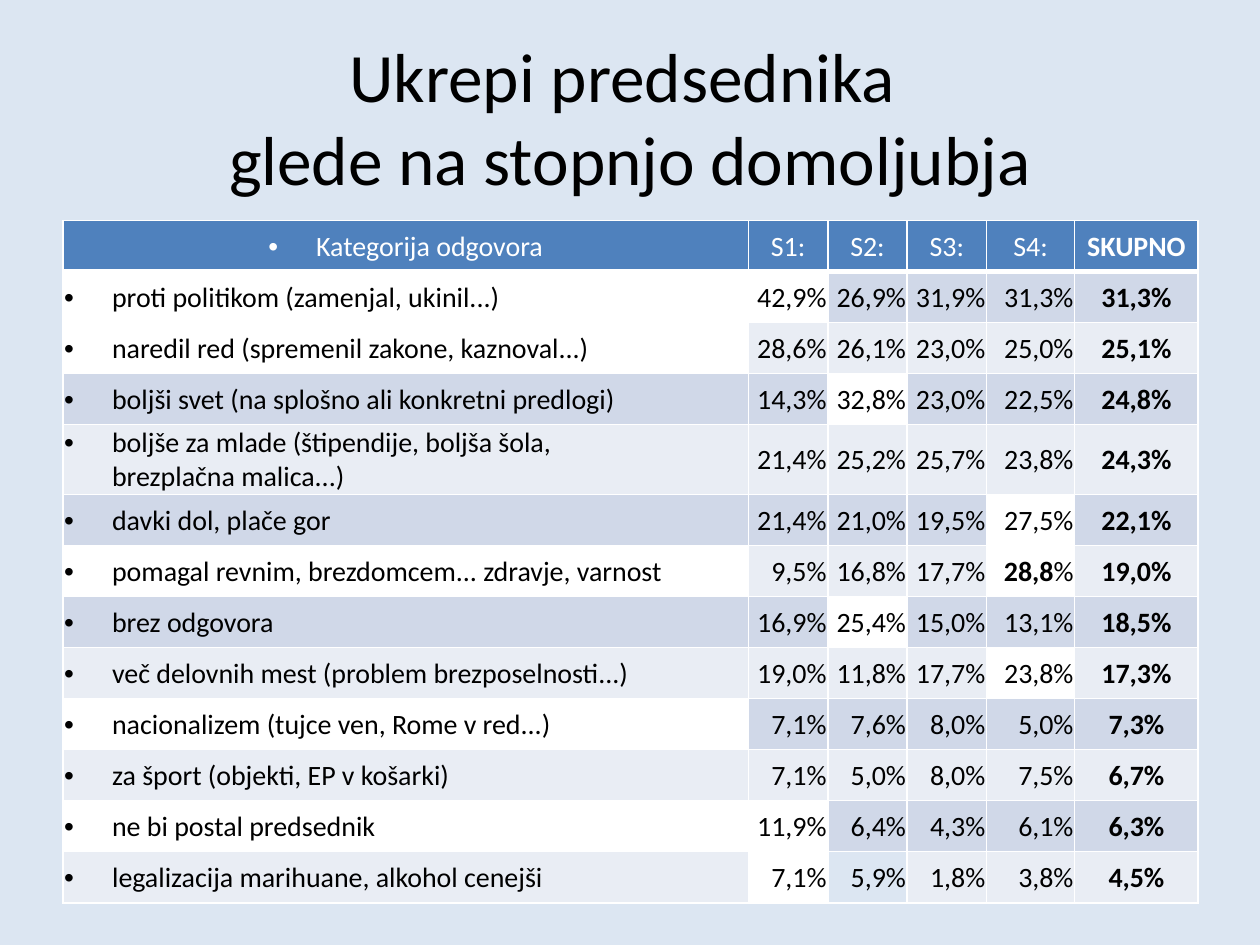
from lxml import etree
from pptx import Presentation
from pptx.dml.color import RGBColor
from pptx.enum.text import MSO_ANCHOR, PP_ALIGN
from pptx.oxml.ns import qn
from pptx.util import Inches, Pt

CENTER, LEFT, RIGHT, JUSTIFY = PP_ALIGN.CENTER, PP_ALIGN.LEFT, PP_ALIGN.RIGHT, PP_ALIGN.JUSTIFY
MIDDLE = MSO_ANCHOR.MIDDLE

TITLE = "Ukrepi predsednika \nglede na stopnjo domoljubja"
HEADER = ["Kategorija odgovora", "S1:", "S2:", "S3:", "S4:", "SKUPNO"]
# answer category, shares by group and in total, columns highlighted in white
ANSWERS = [
    ("proti politikom (zamenjal, ukinil...)", "42,9 26,9 31,9 31,3 31,3", {0, 1}),
    ("naredil red (spremenil zakone, kaznoval...)", "28,6 26,1 23,0 25,0 25,1", {0}),
    ("boljši svet (na splošno ali konkretni predlogi)", "14,3 32,8 23,0 22,5 24,8", {2}),
    ("boljše za mlade (štipendije, boljša šola, \nbrezplačna malica...)",
     "21,4 25,2 25,7 23,8 24,3", set()),
    ("davki dol, plače gor", "21,4 21,0 19,5 27,5 22,1", {4}),
    ("pomagal revnim, brezdomcem... zdravje, varnost", "9,5 16,8 17,7 28,8 19,0", {0, 4}),
    ("brez odgovora", "16,9 25,4 15,0 13,1 18,5", {2}),
    ("več delovnih mest (problem brezposelnosti...)", "19,0 11,8 17,7 23,8 17,3", {4}),
    ("nacionalizem (tujce ven, Rome v red...)", "7,1 7,6 8,0 5,0 7,3", {0}),
    ("za šport (objekti, EP v košarki)", "7,1 5,0 8,0 7,5 6,7", set()),
    ("ne bi postal predsednik", "11,9 6,4 4,3 6,1 6,3", {0, 1}),
    ("legalizacija marihuane, alkohol cenejši", "7,1 5,9 1,8 3,8 4,5", {1}),
]
BOLD_NUMBER = (6, 4)
UNFILLED = (12, 2)
COLUMN_WIDTHS = [5.44, 0.63, 0.63, 0.63, 0.7, 0.98]
TOTAL = len(COLUMN_WIDTHS) - 1
BACKGROUND, HEAD_FILL, WHITE, BLACK = "DCE6F2", "4F81BD", "FFFFFF", "000000"
BANDS = ["E9EDF4", "D0D8E8"]
MARGINS = {"margin_left": 0.01, "margin_right": 0.01, "margin_top": 0.01, "margin_bottom": 0}


def color(hex_text):
    return RGBColor.from_string(hex_text)


def format_span(span, size, hex_text, bold=False):
    for name, value in {"name": "Calibri", "size": Pt(size), "bold": bold}.items():
        setattr(span.font, name, value)
    span.font.color.rgb = color(hex_text)


def add_bullet(para):
    props = para._p.get_or_add_pPr()
    props.set("marL", str(Inches(0.38)))
    props.set("indent", str(-Inches(0.38)))
    etree.SubElement(props, qn("a:buFont"), typeface="Arial")
    etree.SubElement(props, qn("a:buChar"), char="•")


def add_borders(cell, widths):
    """Draw white borders; widths maps the sides L, R, T, B to points."""
    props = cell._tc.get_or_add_tcPr()
    for side, width in widths.items():
        line = etree.SubElement(props, qn(f"a:ln{side}"), w=str(Pt(width)))
        fill = etree.SubElement(line, qn("a:solidFill"))
        etree.SubElement(fill, qn("a:srgbClr"), val=WHITE)


def fill_cell(cell, row, column, highlighted):
    if (row, column) == UNFILLED:
        cell.fill.background()
        return
    cell.fill.solid()
    band = HEAD_FILL if row == 0 else BANDS[row % 2]
    cell.fill.fore_color.rgb = color(WHITE if column in highlighted else band)


def write_cell(cell, row, column, text):
    para = cell.text_frame.paragraphs[0]
    if row == 0 or column == TOTAL:
        para.alignment = CENTER
    elif column:
        para.alignment = RIGHT
    else:
        para.alignment = LEFT if "\n" in text else JUSTIFY
    if column == 0:
        add_bullet(para)
    if (row, column) == BOLD_NUMBER:
        for part in (text[:-1], text[-1]):
            para.add_run().text = part
    else:
        para.text = text
    for span in para.runs:
        bold = column == TOTAL or ((row, column) == BOLD_NUMBER and span.text != "%")
        format_span(span, 16, BLACK if row else WHITE, bold)


def add_title(page):
    box = page.shapes.title
    box.left, box.top, box.width, box.height = map(Inches, (0.5, 0.3, 9, 1.25))
    box.text_frame.vertical_anchor = MIDDLE
    para = box.text_frame.paragraphs[0]
    para.text = TITLE
    para.alignment = CENTER
    for span in para.runs:
        format_span(span, 39.6, BLACK)


def add_answer_table(page):
    rows = [(HEADER, set())]
    for label, shares, highlighted in ANSWERS:
        rows.append(([label] + [f"{share}%" for share in shares.split()], highlighted))
    table = page.shapes.add_table(len(rows), len(HEADER), Inches(0.5), Inches(1.75),
                                  Inches(9), Inches(5.27)).table
    table.horz_banding = False
    for column, width in zip(table.columns, COLUMN_WIDTHS):
        column.width = Inches(width)
    for row, (texts, highlighted) in enumerate(rows):
        for column, text in enumerate(texts):
            cell = table.cell(row, column)
            cell.vertical_anchor = MIDDLE
            for name, value in MARGINS.items():
                setattr(cell, name, Inches(value))
            add_borders(cell, {"L": 1, "R": 1, "T": 3 if row == 1 else 1, "B": 1 if row else 3})
            fill_cell(cell, row, column, highlighted)
            write_cell(cell, row, column, text)


def main():
    deck = Presentation()
    deck.slide_width, deck.slide_height = Inches(10), Inches(7.5)
    page = deck.slides.add_slide(deck.slide_layouts[5])
    page.background.fill.solid()
    page.background.fill.fore_color.rgb = color(BACKGROUND)
    add_title(page)
    add_answer_table(page)
    deck.save("out.pptx")


if __name__ == "__main__":
    main()
